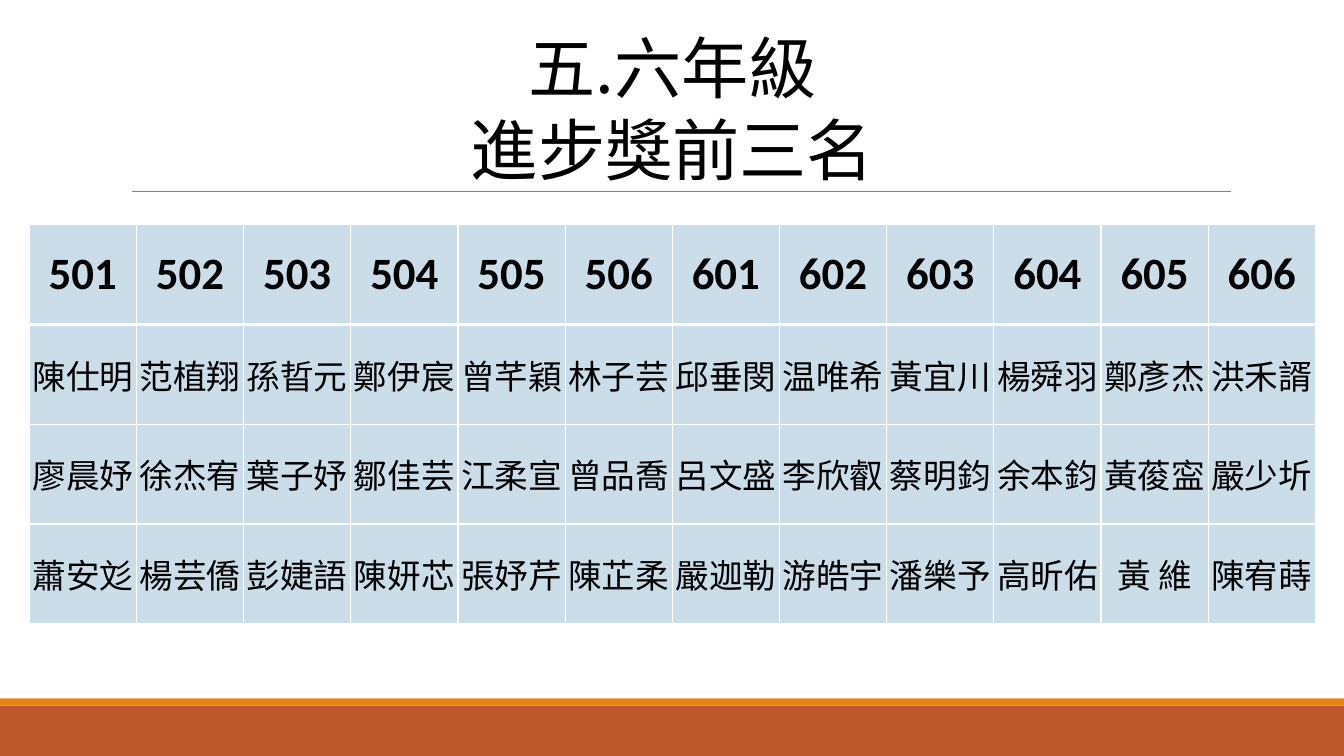
from pptx import Presentation
from pptx.dml.color import RGBColor
from pptx.enum.shapes import MSO_CONNECTOR, MSO_SHAPE
from pptx.enum.text import MSO_ANCHOR, PP_ALIGN
from pptx.oxml.ns import qn
from pptx.util import Inches, Pt
from lxml.etree import SubElement

TITLE = ["五.六年級", "進步獎前三名"]
ROWS = [
    ["501", "502", "503", "504", "505", "506",
     "601", "602", "603", "604", "605", "606"],
    ["陳仕明", "范植翔", "孫晢元", "鄭伊宸", "曾芊穎", "林子芸",
     "邱垂閔", "温唯希", "黃宜川", "楊舜羽", "鄭彥杰", "洪禾諝"],
    ["廖晨妤", "徐杰宥", "葉子妤", "鄒佳芸", "江柔宣", "曾品喬",
     "呂文盛", "李欣叡", "蔡明鈞", "余本鈞", "黃葰寍", "嚴少圻"],
    ["蕭安彣", "楊芸僑", "彭婕語", "陳妍芯", "張妤芹", "陳芷柔",
     "嚴迦勒", "游皓宇", "潘樂予", "高昕佑", "黃 維", "陳宥蒔"],
]
HUES = {"rust": "BD582C", "amber": "E48312", "rule": "808080",
        "cell": "CCDDEA", "edge": "FFFFFF", "ink": "000000"}
BANDS = [("rust", 7, 0.5), ("amber", 6.93, 0.07)]
WIDE, HIGH = 13.33, 7.5


def hue(name):
    return RGBColor.from_string(HUES[name])


def style(para, face, size, bold=False):
    para.alignment = PP_ALIGN.CENTER
    for run in para.runs:
        font = run.font
        font.name, font.size, font.bold = face, Pt(size), bold
        font.color.rgb = hue("ink")
        SubElement(font._element, qn("a:ea")).set("typeface", face)


def edge(cell, sides):
    props = cell._tc.get_or_add_tcPr()
    for spot, (side, width) in enumerate(sides.items()):
        line = SubElement(props, qn("a:ln" + side), w=str(Pt(width)))
        fill = SubElement(line, qn("a:solidFill"))
        SubElement(fill, qn("a:srgbClr"), val=HUES["edge"])
        props.insert(spot, line)


def add_bands(slide):
    for name, top, high in BANDS:
        band = slide.shapes.add_shape(MSO_SHAPE.RECTANGLE, 0, Inches(top),
                                      Inches(WIDE), Inches(high))
        band.shadow.inherit = False
        band.fill.solid()
        band.fill.fore_color.rgb = hue(name)
        band.line.fill.background()


def add_rule(slide):
    rule = slide.shapes.add_connector(MSO_CONNECTOR.STRAIGHT, Inches(1.31),
                                      Inches(1.9), Inches(12.21), Inches(1.9))
    rule.line.color.rgb = hue("rule")
    rule.line.width = Pt(0.5)
    SubElement(rule._element.spPr, qn("a:effectLst"))


def add_names(slide):
    count = len(ROWS[0])
    table = slide.shapes.add_table(len(ROWS), count, Inches(0.29), Inches(2.23),
                                   Inches(12.76), Inches(3.96)).table
    for col in table.columns:
        col.width = Inches(12.76 / count)
    for i, row in enumerate(ROWS):
        head = i == 0
        for j, text in enumerate(row):
            cell = table.cell(i, j)
            cell.text = text
            cell.vertical_anchor = MSO_ANCHOR.MIDDLE
            cell.fill.solid()
            cell.fill.fore_color.rgb = hue("cell")
            if not head:
                cell.margin_left = cell.margin_right = Inches(0.01)
                cell.margin_top = cell.margin_bottom = Inches(0.01)
            edge(cell, {"L": 1, "R": 1, "T": 3 if i == 1 else 1,
                        "B": 3 if head else 1})
            face, size = ("Calibri", 32) if head else ("Noto Sans CJK SC", 24)
            style(cell.text_frame.paragraphs[0], face, size, head)


def add_title(slide):
    box = slide.shapes.add_textbox(Inches(4.55), Inches(0.21),
                                   Inches(4.24), Inches(1.72))
    frame = box.text_frame
    frame.word_wrap = False
    frame.text = "\n".join(TITLE)
    for para in frame.paragraphs:
        style(para, "Noto Sans CJK JP", 48)
        para.line_spacing = Pt(58)


def main():
    """Build the progress award slide."""
    deck = Presentation()
    deck.slide_width, deck.slide_height = Inches(WIDE), Inches(HIGH)
    slide = deck.slides.add_slide(deck.slide_layouts[6])
    add_bands(slide)
    add_rule(slide)
    add_names(slide)
    add_title(slide)
    deck.save("out.pptx")


if __name__ == "__main__":
    main()
